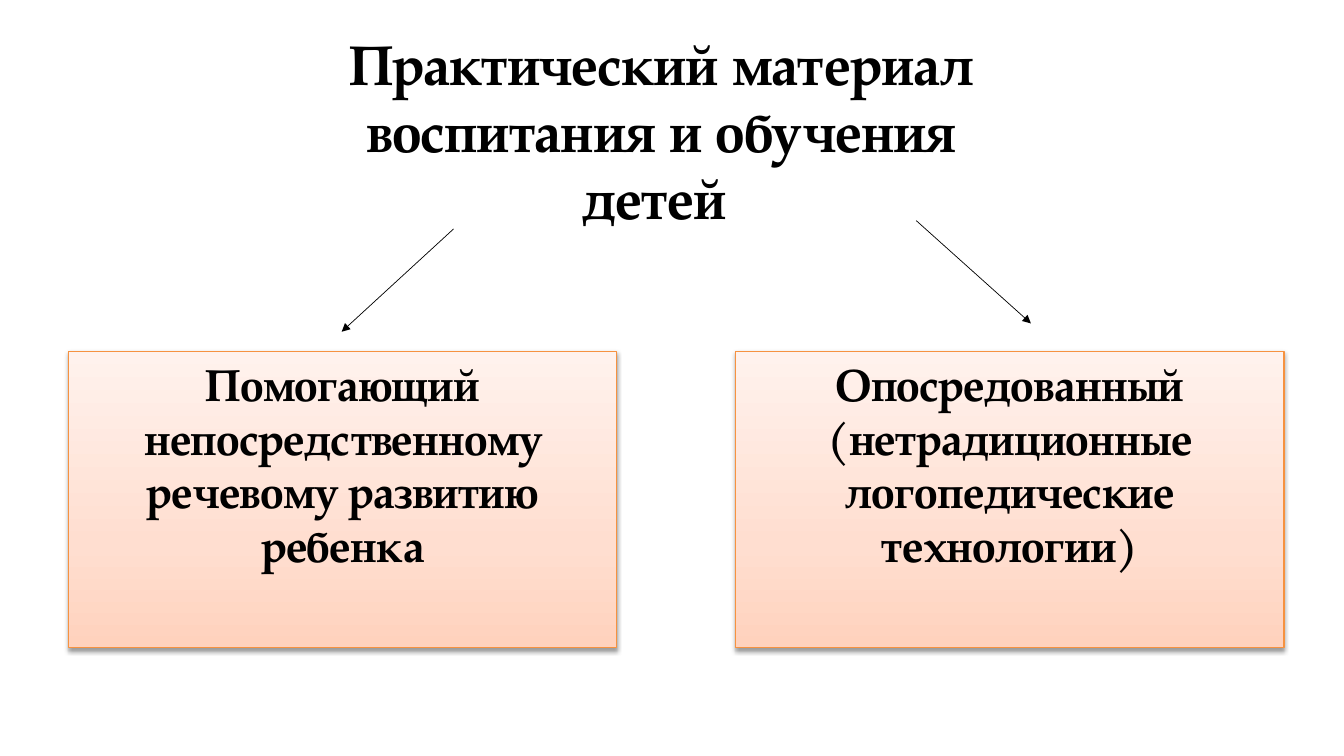
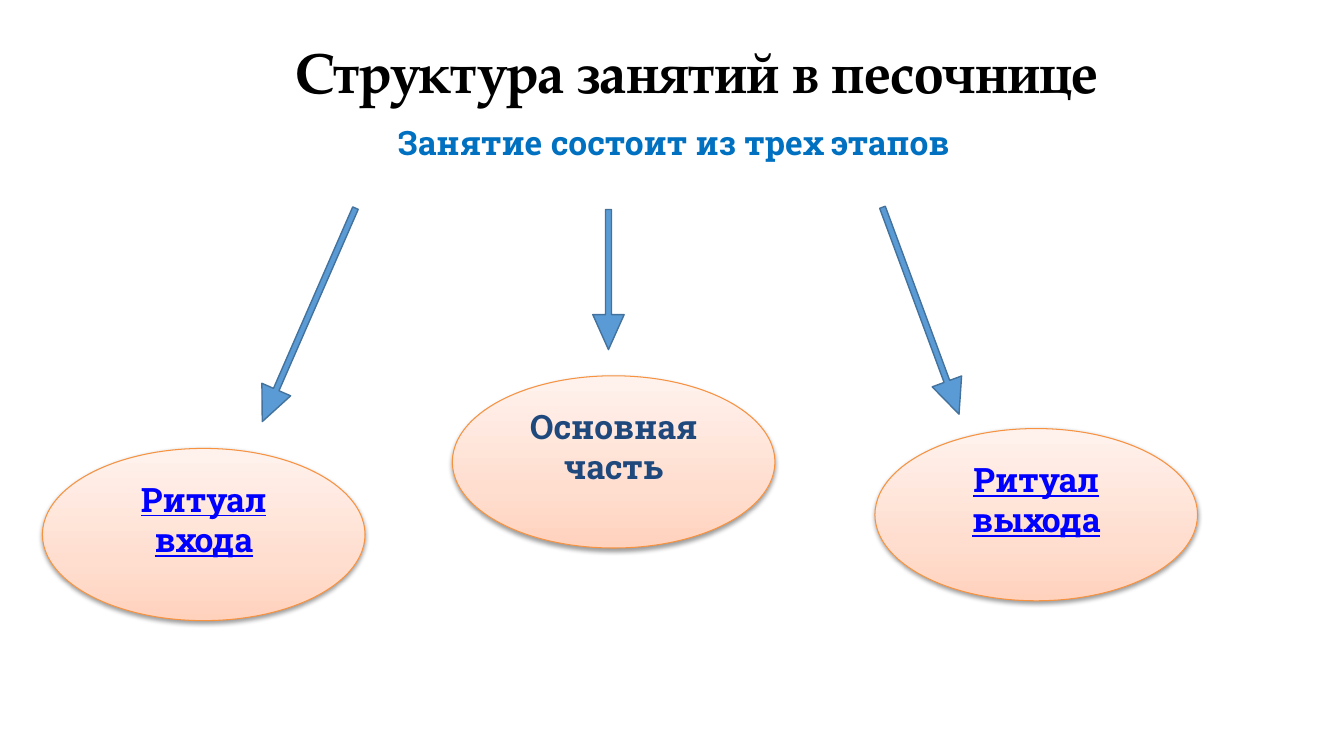
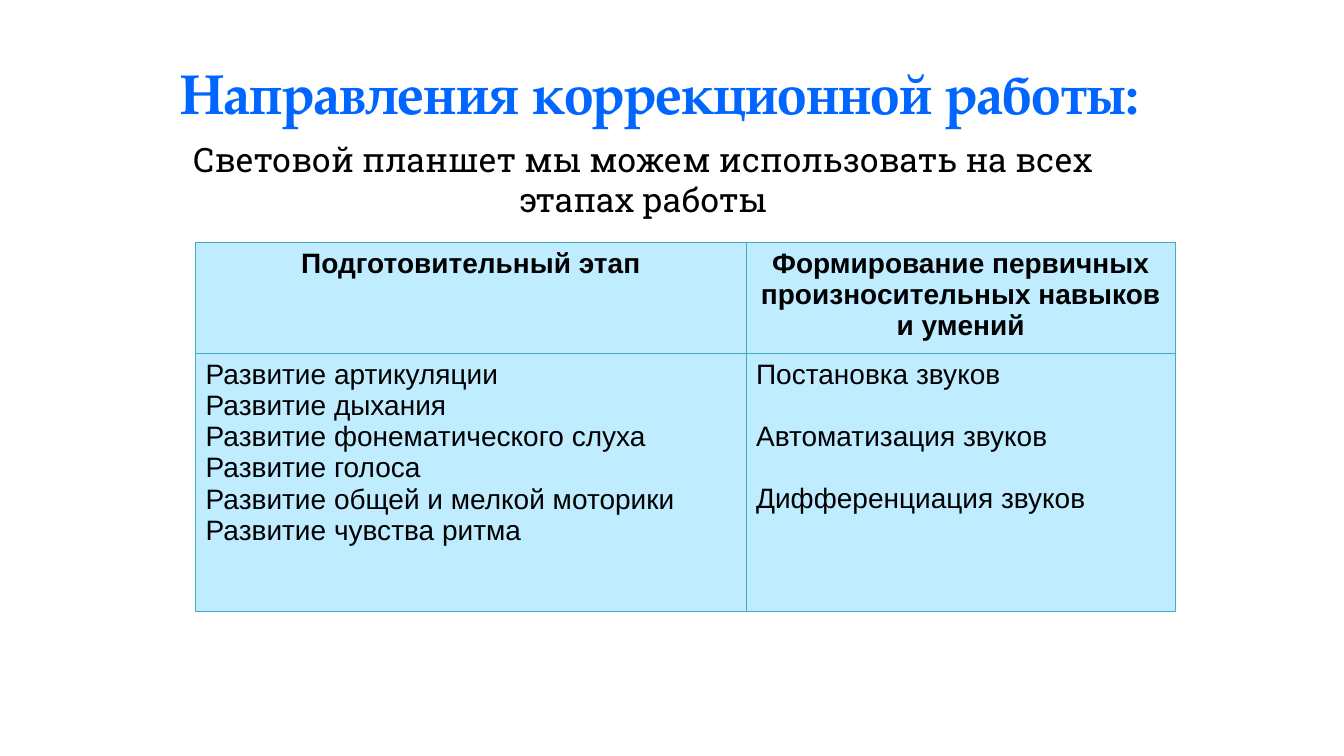
from lxml import etree
from pptx import Presentation
from pptx.dml.color import RGBColor
from pptx.enum.shapes import MSO_CONNECTOR, MSO_SHAPE
from pptx.enum.text import MSO_ANCHOR, PP_ALIGN
from pptx.oxml.ns import qn
from pptx.util import Cm, Pt

CENTER, LEFT = PP_ALIGN.CENTER, PP_ALIGN.LEFT
TOP = MSO_ANCHOR.TOP
RECTANGLE, OVAL, DOWN_ARROW = MSO_SHAPE.RECTANGLE, MSO_SHAPE.OVAL, MSO_SHAPE.DOWN_ARROW
STRAIGHT = MSO_CONNECTOR.STRAIGHT

SERIF, SLAB, SANS = "TeX Gyre Pagella", "Roboto Slab", "Arial"
BLACK, NAVY, LINK_BLUE = "000000", "1F497D", "0000FF"
SUBTITLE_BLUE, TITLE_BLUE = "0070C0", "0066FF"
ARROW_FILL, ARROW_LINE = "5B9BD5", "43729D"
CARD_LINE = "F69240"
CARD_STOPS = [(0, "FFD2BD"), (35, "FFDED0"), (100, "FFF2ED")]
TABLE_FILL, TABLE_LINE = "BFECFF", "46AAC5"

MATERIAL_TITLE = "Практический материал воспитания и обучения детей "
MATERIAL_KINDS = [
    (1.73, ["Помогающий непосредственному речевому развитию ребенка"]),
    (18.54, ["Опосредованный", "(нетрадиционные", "логопедические технологии)"]),
]
MATERIAL_ARROWS = [(11.43, 5.77, 8.61, 8.36), (23.09, 5.56, 25.98, 8.15)]

LESSON_TITLE = "Структура занятий в песочнице"
LESSON_SUBTITLE = "Занятие состоит из трех этапов"
LESSON_STAGES = [
    ("Ритуал входа", 1.07, 11.3, LINK_BLUE, True),
    ("Основная часть", 11.4, 9.47, NAVY, False),
    ("Ритуал выхода", 22.05, 10.8, LINK_BLUE, True),
]
LESSON_ARROWS = [(7.39, 5, 5.87, 23.6), (14.94, 5.28, 3.53, 0), (22.81, 5.05, 5.56, 339.7)]

WORK_TITLE = "Направления коррекционной работы:"
WORK_SUBTITLE = "Световой планшет мы можем использовать на всех этапах работы"
WORK_COLUMNS = [
    (13.87, 0, "Подготовительный этап", [
        "Развитие артикуляции",
        "Развитие дыхания",
        "Развитие фонематического слуха",
        "Развитие голоса",
        "Развитие общей и мелкой моторики",
        "Развитие чувства ритма",
    ]),
    (10.82, 22, "Формирование первичных произносительных навыков и умений", [
        "Постановка звуков",
        "Автоматизация звуков",
        "Дифференциация звуков",
    ]),
]
WORK_ROWS = [2.64, 6.48]


def color(hex_value):
    return RGBColor.from_string(hex_value)


def add_xml(parent, tag, **attributes):
    return etree.SubElement(parent, qn(tag), attributes)


def write(frame, lines, size, font, ink=BLACK, bold=True, underline=None, align=CENTER, gap=0):
    frame.word_wrap = True
    for index, line in enumerate(lines):
        paragraph = frame.paragraphs[0] if index == 0 else frame.add_paragraph()
        paragraph.text = line
        paragraph.alignment = align
        if index and gap:
            paragraph.space_before = Pt(gap)
        paragraph.font.size = Pt(size)
        paragraph.font.name = font
        paragraph.font.bold = bold
        paragraph.font.underline = underline
        paragraph.font.color.rgb = color(ink)


def add_text(slide, box, text, size, font, **style):
    frame = slide.shapes.add_textbox(*map(Cm, box)).text_frame
    write(frame, [text], size, font, **style)


def add_title(slide, box, text, ink=BLACK):
    add_text(slide, box, text, 40, SERIF, ink=ink)


def add_card(slide, preset, box, lines, size, font, **style):
    card = slide.shapes.add_shape(preset, *map(Cm, box))
    card.fill.gradient()
    card.fill.gradient_angle = 90
    properties = card._element.spPr
    stops = properties.find(qn("a:gradFill")).find(qn("a:gsLst"))
    for old_stop in list(stops):
        stops.remove(old_stop)
    for percent, hex_value in CARD_STOPS:
        stop = add_xml(stops, "a:gs", pos=str(percent * 1000))
        add_xml(stop, "a:srgbClr", val=hex_value)
    card.line.color.rgb = color(CARD_LINE)
    card.line.width = Pt(0.75)
    card.shadow.inherit = False
    shadow = add_xml(properties.find(qn("a:effectLst")), "a:outerShdw",
                     blurRad="40000", dist="20000", dir="5400000", rotWithShape="0")
    shade = add_xml(shadow, "a:srgbClr", val=BLACK)
    add_xml(shade, "a:alpha", val="38000")
    card.text_frame.vertical_anchor = TOP
    write(card.text_frame, lines, size, font, **style)


def add_thin_arrow(slide, ends):
    arrow = slide.shapes.add_connector(STRAIGHT, *map(Cm, ends))
    arrow.line.color.rgb = color(BLACK)
    arrow.line.width = Pt(0.5)
    add_xml(arrow.line._get_or_add_ln(), "a:tailEnd", type="triangle")
    add_xml(arrow._element.spPr, "a:effectLst")


def add_block_arrow(slide, left, top, height, rotation):
    arrow = slide.shapes.add_shape(DOWN_ARROW, Cm(left), Cm(top), Cm(0.79), Cm(height))
    arrow.adjustments[0] = 0.192
    arrow.adjustments[1] = 1.115
    arrow.rotation = rotation
    arrow.fill.solid()
    arrow.fill.fore_color.rgb = color(ARROW_FILL)
    arrow.line.color.rgb = color(ARROW_LINE)
    arrow.line.width = Pt(1)
    arrow.shadow.inherit = False


def style_cell(cell):
    properties = cell._tc.get_or_add_tcPr()
    for side in ("a:lnL", "a:lnR", "a:lnT", "a:lnB"):
        border = add_xml(properties, side, w=str(Pt(0.75)))
        add_xml(add_xml(border, "a:solidFill"), "a:srgbClr", val=TABLE_LINE)
    cell.fill.solid()
    cell.fill.fore_color.rgb = color(TABLE_FILL)


def build_material(slide):
    add_title(slide, (8.2, 0.61, 16.94, 2.62), MATERIAL_TITLE)
    for left, lines in MATERIAL_KINDS:
        add_card(slide, RECTANGLE, (left, 8.86, 13.82, 7.47), lines, 32, SERIF)
    for ends in MATERIAL_ARROWS:
        add_thin_arrow(slide, ends)


def build_lesson(slide):
    add_title(slide, (5.05, 0.81, 25.02, 2.11), LESSON_TITLE)
    add_text(slide, (9.78, 2.95, 15.52, 1.27), LESSON_SUBTITLE, 24, SLAB,
             ink=SUBTITLE_BLUE, align=LEFT)
    for arrow in LESSON_ARROWS:
        add_block_arrow(slide, *arrow)
    for stage, left, top, ink, underline in LESSON_STAGES:
        add_card(slide, OVAL, (left, top, 8.13, 4.34), [stage], 24, SLAB,
                 ink=ink, underline=underline)


def build_work(slide):
    add_title(slide, (2.06, 1.35, 29.16, 2.97), WORK_TITLE, TITLE_BLUE)
    add_text(slide, (4.24, 3.38, 23.93, 3.3), WORK_SUBTITLE, 24, SLAB, bold=False)
    width = sum(column[0] for column in WORK_COLUMNS)
    table = slide.shapes.add_table(len(WORK_ROWS), len(WORK_COLUMNS), Cm(4.93), Cm(6.12),
                                   Cm(width), Cm(sum(WORK_ROWS))).table
    table.first_row = False
    table.horz_banding = False
    for row, height in zip(table.rows, WORK_ROWS):
        row.height = Cm(height)
    for index, (column_width, gap, heading, tasks) in enumerate(WORK_COLUMNS):
        table.columns[index].width = Cm(column_width)
        head, body = table.cell(0, index), table.cell(1, index)
        style_cell(head)
        style_cell(body)
        write(head.text_frame, [heading], 20, SANS)
        write(body.text_frame, tasks, 20, SANS, bold=False, align=LEFT, gap=gap)


def main():
    deck = Presentation()
    deck.slide_width, deck.slide_height = Cm(33.87), Cm(19.05)
    for build in (build_material, build_lesson, build_work):
        build(deck.slides.add_slide(deck.slide_layouts[6]))
    deck.save("out.pptx")


if __name__ == "__main__":
    main()
